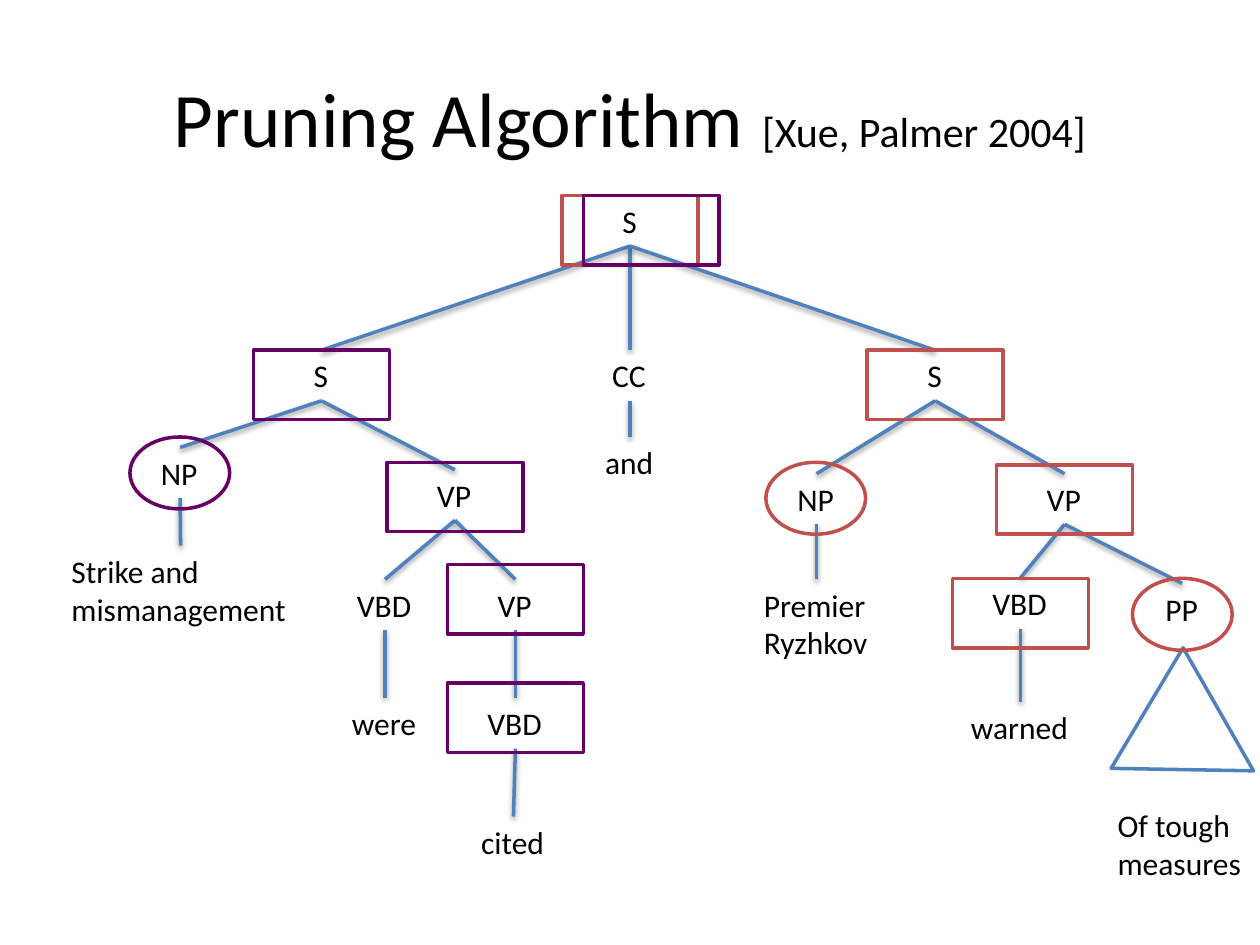
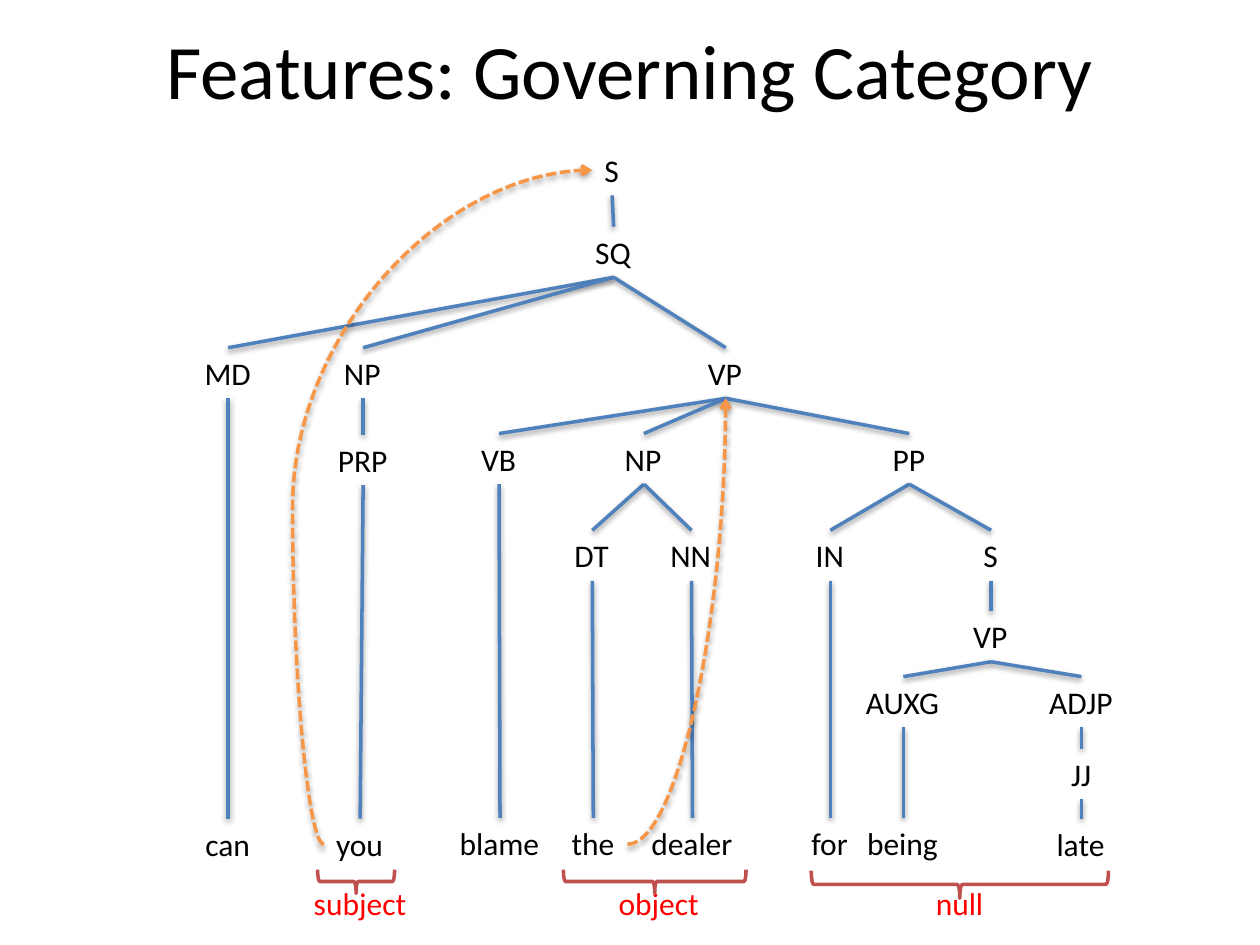
import pptx
import pptx.dml.color
import pptx.enum.dml
import pptx.enum.shapes
import pptx.enum.text
import pptx.oxml
import pptx.oxml.ns
import pptx.util

Cm = pptx.util.Cm
Pt = pptx.util.Pt
RGBColor = pptx.dml.color.RGBColor
SHAPE = pptx.enum.shapes.MSO_SHAPE
CONNECTOR = pptx.enum.shapes.MSO_CONNECTOR
qn = pptx.oxml.ns.qn

BLACK = RGBColor(0x00, 0x00, 0x00)
WHITE = RGBColor(0xFF, 0xFF, 0xFF)
BLUE = RGBColor(0x4F, 0x81, 0xBD)
BRICK = RGBColor(0xC0, 0x50, 0x4D)
PURPLE = RGBColor(0x66, 0x00, 0x66)
ORANGE = RGBColor(0xF7, 0x96, 0x46)
RED = RGBColor(0xFF, 0x00, 0x00)

FONT = "Calibri"
LINE_WIDTH = Pt(2)
NODE_HEIGHT = 1.02
NODE_LINE = 0.78
MARK_SIZES = {SHAPE.RECTANGLE: (2.74, 1.4), SHAPE.OVAL: (2.01, 1.45)}

SHADOW = (
    f'<a:effectLst {pptx.oxml.ns.nsdecls("a")}>'
    '<a:outerShdw blurRad="40000" dist="20000" dir="5400000" rotWithShape="0">'
    '<a:srgbClr val="000000"><a:alpha val="38000"/></a:srgbClr>'
    "</a:outerShdw></a:effectLst>"
)

# key, text, centre, top, width, parent
PRUNING_TREE = [
    ("root", "S", 12.7, 3.94, 0.81, None),
    ("left S", "S", 6.48, 7.06, 0.81, "root"),
    ("CC", "CC", 12.7, 7.06, 1.22, "root"),
    ("right S", "S", 18.85, 7.06, 0.81, "root"),
    ("and", "and", 12.7, 8.81, 1.5, "CC"),
    ("left NP", "NP", 3.63, 9.02, 1.27, "left S"),
    ("strike", "Strike and\nmismanagement", 3.64, 11.0, 4.9, "left NP"),
    ("left VP", "VP", 9.17, 9.47, 1.22, "left S"),
    ("VBD were", "VBD", 7.76, 11.68, 1.63, "left VP"),
    ("were", "were", 7.76, 14.07, 1.83, "VBD were"),
    ("inner VP", "VP", 10.39, 11.68, 1.22, "left VP"),
    ("VBD cited", "VBD", 10.39, 14.07, 1.63, "inner VP"),
    ("cited", "cited", 10.35, 16.46, 1.8, "VBD cited"),
    ("right NP", "NP", 16.46, 9.55, 1.27, "right S"),
    ("premier", "Premier\nRyzhkov", 16.46, 11.68, 2.62, "right NP"),
    ("right VP", "VP", 21.46, 9.55, 1.22, "right S"),
    ("VBD warned", "VBD", 20.57, 11.65, 1.63, "right VP"),
    ("warned", "warned", 20.57, 14.15, 2.49, "VBD warned"),
    ("PP", "PP", 23.83, 11.76, 1.17, "right VP"),
    ("measures", "Of tough\nmeasures", 23.79, 16.13, 3.02, None),
]

PRUNING_MARKS = [
    (SHAPE.RECTANGLE, BRICK, [(19.2, 11.66), (20.09, 9.37), (17.48, 7.06), (11.33, 3.94)]),
    (SHAPE.OVAL, BRICK, [(22.83, 11.66), (15.44, 9.32)]),
    (SHAPE.RECTANGLE, PURPLE,
     [(9.02, 13.77), (9.02, 11.38), (7.8, 9.32), (5.11, 7.06), (11.76, 3.94)]),
    (SHAPE.OVAL, PURPLE, [(2.62, 8.81)]),
]

PP_TRIANGLE = [(23.85, 13.06), (22.4, 15.49), (25.27, 15.54)]

GOVERNING_TREE = [
    ("root", "S", 12.34, 2.92, 0.81, None),
    ("SQ", "SQ", 12.37, 4.57, 1.24, "root"),
    ("MD", "MD", 4.6, 7.01, 1.45, "SQ"),
    ("subject NP", "NP", 7.32, 7.01, 1.27, "SQ"),
    ("VP", "VP", 14.63, 7.01, 1.22, "SQ"),
    ("PRP", "PRP", 7.32, 8.76, 1.52, "subject NP"),
    ("VB", "VB", 10.06, 8.74, 1.22, "VP"),
    ("object NP", "NP", 12.98, 8.74, 1.27, "VP"),
    ("PP", "PP", 18.33, 8.74, 1.17, "VP"),
    ("DT", "DT", 11.94, 10.69, 1.22, "object NP"),
    ("NN", "NN", 13.94, 10.69, 1.35, "object NP"),
    ("IN", "IN", 16.74, 10.69, 1.09, "PP"),
    ("inner S", "S", 19.98, 10.69, 0.81, "PP"),
    ("inner VP", "VP", 19.98, 12.32, 1.22, "inner S"),
    ("AUXG", "AUXG", 18.21, 13.64, 2.01, "inner VP"),
    ("ADJP", "ADJP", 21.8, 13.64, 1.8, "inner VP"),
    ("JJ", "JJ", 21.8, 15.09, 0.91, "ADJP"),
    ("can", "can", 4.6, 16.5, 1.42, "MD"),
    ("you", "you", 7.26, 16.5, 1.47, "PRP"),
    ("blame", "blame", 10.08, 16.49, 2.13, "VB"),
    ("the", "the", 11.96, 16.49, 1.37, "DT"),
    ("dealer", "dealer", 13.96, 16.49, 2.16, "NN"),
    ("for", "for", 16.74, 16.49, 1.27, "IN"),
    ("being", "being", 18.21, 16.49, 1.96, "AUXG"),
    ("late", "late", 21.8, 16.5, 1.5, "JJ"),
]

# text, label centre, label width, brace centre x and y, span, depth
ROLES = [
    ("subject", 7.28, 2.41, 7.18, 17.77, 1.55, 0.48),
    ("object", 13.3, 2.16, 13.2, 17.77, 3.68, 0.48),
    ("null", 19.35, 1.47, 19.35, 17.83, 5.99, 0.56),
]


def format_run(r, size, color):
    r.font.name = FONT
    r.font.size = Pt(size)
    r.font.color.rgb = color


def add_title(slide, top, height, *parts):
    sp = slide.shapes.add_textbox(Cm(1.27), Cm(top), Cm(22.86), Cm(height))
    tf = sp.text_frame
    tf.word_wrap = True
    tf.vertical_anchor = pptx.enum.text.MSO_ANCHOR.MIDDLE
    p = tf.paragraphs[0]
    p.alignment = pptx.enum.text.PP_ALIGN.CENTER
    for text, size in parts:
        r = p.add_run()
        r.text = text
        format_run(r, size, BLACK)


def add_label(slide, text, center, top, width, color=BLACK):
    height = NODE_HEIGHT + NODE_LINE * text.count("\n")
    sp = slide.shapes.add_textbox(Cm(center - width / 2), Cm(top), Cm(width), Cm(height))
    tf = sp.text_frame
    tf.word_wrap = False
    tf.auto_size = pptx.enum.text.MSO_AUTO_SIZE.SHAPE_TO_FIT_TEXT
    tf.text = text
    for p in tf.paragraphs:
        format_run(p.runs[0], 18, color)


def add_link(slide, start, end, color=BLUE, kind=CONNECTOR.STRAIGHT):
    sp = slide.shapes.add_connector(kind, *map(Cm, start + end))
    sp.line.color.rgb = color
    sp.line.width = LINE_WIDTH
    sp._element.spPr.append(pptx.oxml.parse_xml(SHADOW))
    return sp


def add_curved_arrow(slide, start, end, preset, bend=None):
    sp = add_link(slide, start, end, ORANGE, CONNECTOR.CURVE)
    sp.line.dash_style = pptx.enum.dml.MSO_LINE.SQUARE_DOT
    spPr = sp._element.spPr
    pptx.oxml.xmlchemy.OxmlElement("a:tailEnd")
    tail = pptx.oxml.xmlchemy.OxmlElement("a:tailEnd")
    tail.set("type", "arrow")
    spPr.find(qn("a:ln")).append(tail)
    geom = spPr.find(qn("a:prstGeom"))
    geom.set("prst", preset)
    if bend is not None:
        gd = pptx.oxml.xmlchemy.OxmlElement("a:gd")
        gd.set("name", "adj1")
        gd.set("fmla", f"val {bend}")
        geom.find(qn("a:avLst")).append(gd)


def add_tree(slide, nodes):
    places = {}
    for key, text, center, top, width, parent in nodes:
        add_label(slide, text, center, top, width)
        places[key] = (center, top)
        if parent:
            x, y = places[parent]
            add_link(slide, (x, y + NODE_HEIGHT), (center, top))


def style_outline(sp, color, filled=False):
    sp.shadow.inherit = False
    if filled:
        sp.fill.solid()
        sp.fill.fore_color.rgb = WHITE
    else:
        sp.fill.background()
    sp.line.color.rgb = color
    sp.line.width = LINE_WIDTH


def add_mark(slide, kind, color, left, top):
    width, height = MARK_SIZES[kind]
    sp = slide.shapes.add_shape(kind, Cm(left), Cm(top), Cm(width), Cm(height))
    style_outline(sp, color)


def add_triangle(slide, corners):
    first, *rest = [(Cm(x), Cm(y)) for x, y in corners]
    builder = slide.shapes.build_freeform(*first)
    builder.add_line_segments(rest, close=True)
    style_outline(builder.convert_to_shape(), BLUE, filled=True)


def add_brace(slide, x, y, span, depth):
    sp = slide.shapes.add_shape(
        SHAPE.LEFT_BRACE, Cm(x - depth / 2), Cm(y - span / 2), Cm(depth), Cm(span))
    sp.rotation = 270
    style_outline(sp, BRICK, filled=True)


def build_pruning(slide):
    add_title(slide, 0.76, 3.18, ("Pruning Algorithm ", 44), ("[Xue, Palmer 2004]", 24))
    add_tree(slide, PRUNING_TREE)
    add_triangle(slide, PP_TRIANGLE)
    for kind, color, corners in PRUNING_MARKS:
        for left, top in corners:
            add_mark(slide, kind, color, left, top)


def build_governing(slide):
    add_title(slide, 0, 2.79, ("Features: Governing Category", 44))
    add_tree(slide, GOVERNING_TREE)
    for text, center, width, x, y, span, depth in ROLES:
        add_label(slide, text, center, 17.7, width, RED)
        add_brace(slide, x, y, span, depth)
    add_curved_arrow(slide, (6.53, 17.02), (11.94, 3.43), "curvedConnector3", -11700)
    add_curved_arrow(slide, (12.65, 17.02), (14.63, 8.03), "curvedConnector2")


def main():
    prs = pptx.Presentation()
    prs.slide_width, prs.slide_height = Cm(25.4), Cm(19.05)
    for build in (build_pruning, build_governing):
        build(prs.slides.add_slide(prs.slide_layouts[6]))
    prs.save("out.pptx")


if __name__ == "__main__":
    main()
